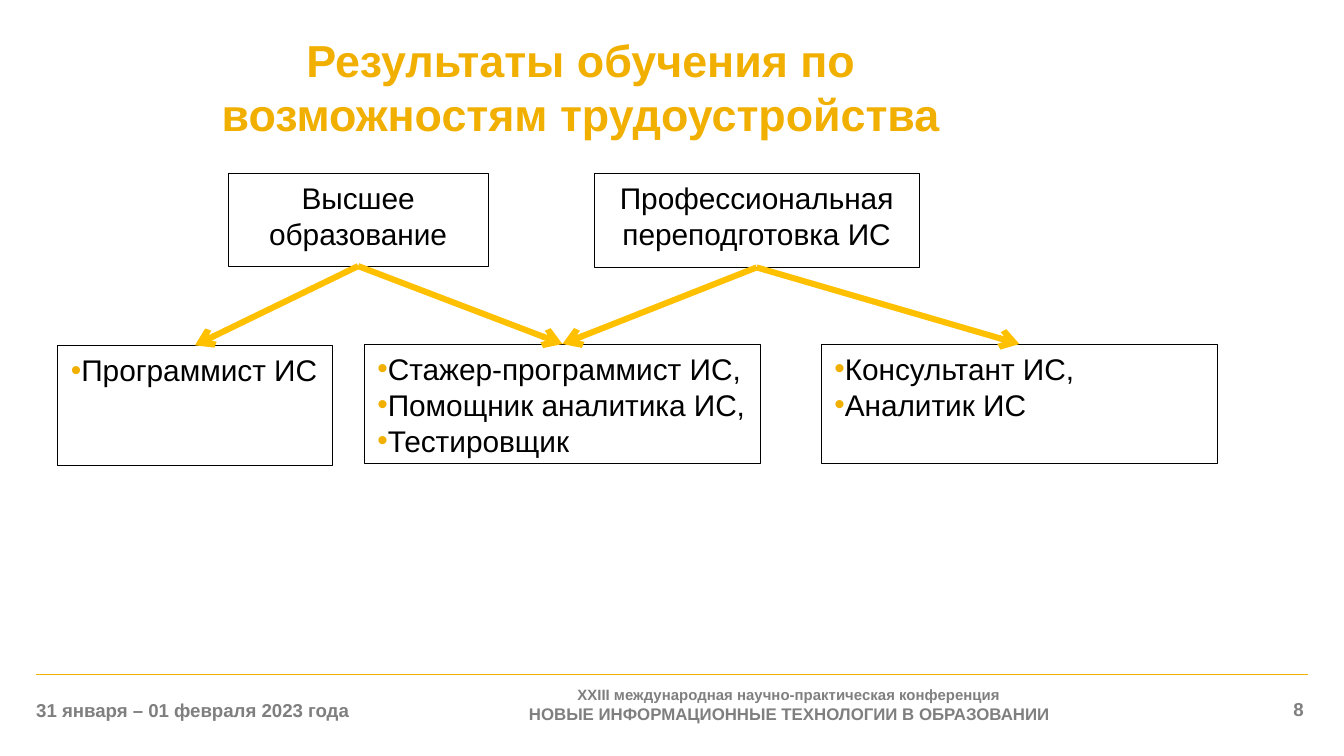
from lxml.etree import SubElement
from pptx import Presentation
from pptx.dml.color import RGBColor
from pptx.enum.shapes import MSO_CONNECTOR, MSO_SHAPE
from pptx.enum.text import MSO_ANCHOR, MSO_AUTO_SIZE, PP_ALIGN
from pptx.oxml.ns import qn
from pptx.util import Inches, Pt

GOLD = RGBColor(0xF1, 0xAF, 0x00)
AMBER = RGBColor(0xFF, 0xC0, 0x00)
GREY = RGBColor(0x7F, 0x7F, 0x7F)
BLACK = RGBColor(0, 0, 0)
BOTTOM, TOP = 2, 0  # connection sites of a rectangle


def style(font, size, color, bold=False):
    font.name, font.size, font.bold = "Arial", Pt(size), bold
    font.color.rgb = color


def add_line(color, width, ends=(0, 0, 0, 0)):
    line = slide.shapes.add_connector(MSO_CONNECTOR.STRAIGHT, *map(Inches, ends))
    line.line.color.rgb, line.line.width = color, Pt(width)
    SubElement(line._element.spPr, qn("a:effectLst"))
    return line


prs = Presentation()
prs.slide_width = Inches(10)
prs.slide_height = prs.slide_width * 9 // 16
slide = prs.slides.add_slide(prs.slide_layouts[5])

# Title
title = slide.shapes.title
title.left, title.top, title.width, title.height = map(Inches, (1.44, 0.04, 5.76, 1.21))
heading = title.text_frame
heading.text = "Результаты обучения по возможностям трудоустройства"
heading.word_wrap, heading.auto_size = True, MSO_AUTO_SIZE.NONE
heading.vertical_anchor = MSO_ANCHOR.MIDDLE
heading.margin_left = heading.margin_right = Inches(0.06)
heading.margin_top = heading.margin_bottom = 0
heading.paragraphs[0].alignment = PP_ALIGN.CENTER
style(heading.paragraphs[0].font, 24, GOLD, True)

# Education programmes above, jobs below: left, top, width, height, lines, bulleted
nodes = {
    "higher": (1.7, 1.29, 1.93, 0.69, ["Высшее образование"], False),
    "retraining": (4.42, 1.29, 2.42, 0.7, ["Профессиональная переподготовка ИС"], False),
    "programmer": (0.43, 2.57, 2.04, 0.89, ["Программист ИС"], True),
    "trainee": (2.71, 2.56, 2.95, 0.89,
                ["Стажер-программист ИС,", "Помощник аналитика ИС,", "Тестировщик"], True),
    "consultant": (6.11, 2.56, 2.95, 0.89, ["Консультант ИС,", "Аналитик ИС"], True),
}
boxes = {}
for key, (*place, lines, bulleted) in nodes.items():
    box = boxes[key] = slide.shapes.add_shape(MSO_SHAPE.RECTANGLE, *map(Inches, place))
    box.shadow.inherit = False
    box.fill.background()
    box.line.color.rgb, box.line.width = BLACK, Pt(0.25)
    box.text_frame.text = "\n".join(lines)
    box.text_frame.word_wrap = True
    box.text_frame.vertical_anchor = MSO_ANCHOR.TOP
    for paragraph in box.text_frame.paragraphs:
        paragraph.alignment = PP_ALIGN.LEFT if bulleted else PP_ALIGN.CENTER
        if bulleted:
            props = paragraph._p.get_or_add_pPr()
            SubElement(SubElement(props, qn("a:buClr")), qn("a:srgbClr"), val=str(GOLD))
            SubElement(props, qn("a:buFont"), typeface="Arial")
            SubElement(props, qn("a:buChar"), char="•")
        style(paragraph.font, 16, BLACK)

for programme, job in [("higher", "programmer"), ("higher", "trainee"),
                       ("retraining", "trainee"), ("retraining", "consultant")]:
    arrow = add_line(AMBER, 3.25)
    arrow.begin_connect(boxes[programme], BOTTOM)
    arrow.end_connect(boxes[job], TOP)
    SubElement(arrow.line._get_or_add_ln(), qn("a:tailEnd"), type="arrow")

# Footer: each text is a list of (line, size)
add_line(GOLD, 0.75, (0.27, 5.02, 9.73, 5.02))
footers = [
    ((0.27, 5.2, 2.36, 0.17), PP_ALIGN.LEFT, [("31 января – 01 февраля 2023 года", 10)]),
    ((2.64, 5.1, 6.46, 0.29), PP_ALIGN.CENTER,
     [("XXIII международная научно-практическая конференция", 8),
      ("НОВЫЕ ИНФОРМАЦИОННЫЕ ТЕХНОЛОГИИ В ОБРАЗОВАНИИ", 9)]),
    ((8.86, 5.19, 0.84, 0.17), PP_ALIGN.RIGHT, [("8", 10)]),
]
for place, alignment, lines in footers:
    frame = slide.shapes.add_textbox(*map(Inches, place)).text_frame
    frame.word_wrap = True
    frame.margin_left = frame.margin_right = frame.margin_top = frame.margin_bottom = 0
    paragraph = frame.paragraphs[0]
    paragraph.alignment = alignment
    for index, (text, size) in enumerate(lines):
        if index:
            paragraph.add_line_break()
        run = paragraph.add_run()
        run.text = text
        style(run.font, size, GREY, True)

prs.save("out.pptx")
